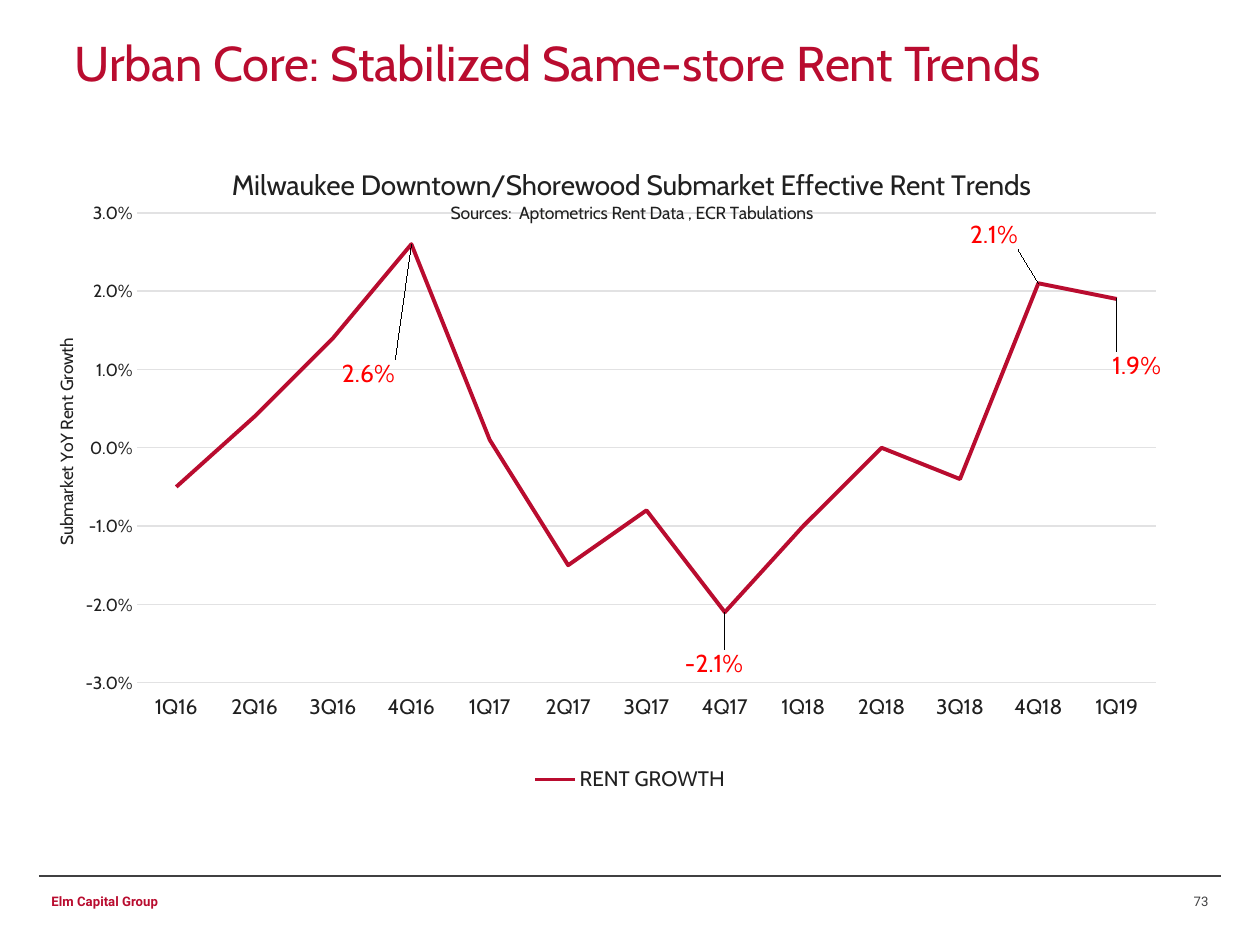
from dataclasses import dataclass
from lxml.etree import SubElement, QName
from pptx import Presentation
from pptx.chart.data import CategoryChartData
from pptx.dml.color import RGBColor
from pptx.enum.chart import (XL_CHART_TYPE, XL_LABEL_POSITION, XL_LEGEND_POSITION,
                             XL_MARKER_STYLE, XL_TICK_LABEL_POSITION, XL_TICK_MARK)
from pptx.enum.shapes import MSO_CONNECTOR
from pptx.enum.text import MSO_ANCHOR, MSO_AUTO_SIZE, PP_ALIGN
from pptx.oxml import parse_xml
from pptx.oxml.ns import qn
from pptx.util import Pt

# Content
TITLE = "Urban Core: Stabilized Same-store Rent Trends"
HEADS = ["Milwaukee Downtown/Shorewood Submarket Effective Rent Trends",
         "Sources:  Aptometrics Rent Data , ECR Tabulations"]
AXIS = "Submarket YoY Rent Growth"
FIRM, PAGE = "Elm Capital Group", "73"
SERIES = "RENT GROWTH"
RENTS = [("1Q16", -0.005), ("2Q16", 0.004), ("3Q16", 0.014), ("4Q16", 0.026),
         ("1Q17", 0.001), ("2Q17", -0.015), ("3Q17", -0.008), ("4Q17", -0.021),
         ("1Q18", -0.010), ("2Q18", 0.000), ("3Q18", -0.004), ("4Q18", 0.021),
         ("1Q19", 0.019)]
# Quarter: label shift from its point, in px
CALLS = {"4Q16": (-74, 130), "4Q17": (-45, 52), "4Q18": (-73, -49), "1Q19": (-10, 67)}

# Places in px: left, top, width, height
WIDE, HIGH = 1260, 945
HEAD_BOX = (62, 6, 1113, 113)
CHART_BOX = (39, 137, 1182, 660)
FIRM_BOX = (39, 887, 256, 29)
PAGE_BOX = (1105, 876, 116, 50)
RULE_Y = 876


@dataclass
class Theme:
    red: RGBColor = RGBColor(0xB9, 0x0C, 0x2F)
    call: RGBColor = RGBColor(0xFF, 0, 0)
    ink: RGBColor = RGBColor(0x20, 0x20, 0x20)
    gray: RGBColor = RGBColor(0x40, 0x40, 0x41)
    grid: RGBColor = RGBColor(0xE2, 0xE2, 0xE3)
    face: str = "Cabin"
    small: str = "Roboto"
    title: float = 27.9
    head: float = 16
    label: float = 14
    cat: float = 12
    val: float = 10
    base: float = 8
    foot: float = 7.5


T = Theme()


def px(n):
    return round(n * 914400 / 126)


def style(font, size, color=T.ink, face=T.face, bold=False):
    font.size, font.name, font.bold = Pt(size), face, bold
    font.color.rgb = color


def stroke(line, color, width):
    line.color.rgb, line.width = color, Pt(width)


def place(node, index, **parts):
    """Give a chart part a manual layout, as shares of the chart."""
    for old in node.findall(qn("c:layout")):
        node.remove(old)
    layout = node.makeelement(qn("c:layout"))
    manual = SubElement(layout, qn("c:manualLayout"))
    for key, val in parts.items():
        SubElement(manual, qn("c:" + key), val=str(val))
    node.insert(index, layout)


def note(slide, box, text, color, align=PP_ALIGN.LEFT, bold=False):
    frame = slide.shapes.add_textbox(*map(px, box)).text_frame
    frame.word_wrap = True
    frame.vertical_anchor = MSO_ANCHOR.MIDDLE
    frame.text = text
    para = frame.paragraphs[0]
    para.alignment = align
    style(para.runs[0].font, T.foot, color, T.small, bold)


def add_title(slide):
    head = slide.shapes.title
    head.left, head.top, head.width, head.height = map(px, HEAD_BOX)
    frame = head.text_frame
    frame.text = TITLE
    frame.auto_size = MSO_AUTO_SIZE.NONE
    frame.vertical_anchor = MSO_ANCHOR.MIDDLE
    frame.paragraphs[0].alignment = PP_ALIGN.LEFT
    style(frame.paragraphs[0].runs[0].font, T.title, T.red)


def add_heads(chart):
    chart.has_title = True
    frame = chart.chart_title.text_frame
    frame.text = HEADS[0]
    frame.add_paragraph().text = HEADS[1]
    for para, size in zip(frame.paragraphs, (T.head, T.val)):
        para.alignment = PP_ALIGN.CENTER
        style(para.runs[0].font, size)
    node = chart.chart_title._element
    place(node, 1, xMode="edge", yMode="edge", x=0.16, y=0.04)
    node.find(qn("c:overlay")).set("val", "1")


def add_axes(chart):
    cat, val = chart.category_axis, chart.value_axis
    for axis, size in ((cat, T.cat), (val, T.val)):
        axis.major_tick_mark = axis.minor_tick_mark = XL_TICK_MARK.NONE
        style(axis.tick_labels.font, size)
    cat.tick_label_position = XL_TICK_LABEL_POSITION.LOW
    cat.has_major_gridlines = False
    stroke(cat.format.line, T.grid, 0.75)
    val.minimum_scale, val.maximum_scale, val.major_unit = -0.03, 0.03, 0.01
    val.tick_labels.number_format = "0.0%"
    val.tick_labels.number_format_is_linked = False
    val.format.line.fill.background()
    stroke(val.major_gridlines.format.line, T.grid, 0.75)
    frame = val.axis_title.text_frame
    frame.text = AXIS
    style(frame.paragraphs[0].runs[0].font, T.val)
    node = val.axis_title._element
    turn = node.find(".//" + qn("a:bodyPr"))
    turn.set("rot", "-5400000")
    turn.set("vert", "horz")
    place(node, 1, xMode="edge", yMode="edge", x=0.01, y=0.3)


def add_calls(line):
    labels = line.data_labels
    labels.show_value = False
    labels.number_format = "0.0%"
    labels.number_format_is_linked = False
    for i, (name, _) in enumerate(RENTS):
        if name in CALLS:
            label = line.points[i].data_label
            style(label.font, T.label, T.call)
            label.position = XL_LABEL_POSITION.RIGHT
    nodes = labels._element.findall(qn("c:dLbl"))
    for node, (dx, dy) in zip(nodes, CALLS.values()):
        place(node, 1, x=round(dx / CHART_BOX[2], 3), y=round(dy / CHART_BOX[3], 3))
    # Leader lines from points to moved labels
    labels._element.append(parse_xml(
        '<c:extLst xmlns:c="http://schemas.openxmlformats.org/drawingml/2006/chart">'
        '<c:ext uri="{CE6537A1-D6FC-4f65-9D91-7224C49458BB}" '
        'xmlns:c15="http://schemas.microsoft.com/office/drawing/2012/chart">'
        '<c15:showLeaderLines val="1"/></c:ext></c:extLst>'))


def add_rents(slide):
    data = CategoryChartData(number_format="0.0%")
    data.categories = [name for name, _ in RENTS]
    data.add_series(SERIES, [rent for _, rent in RENTS])
    chart = slide.shapes.add_chart(XL_CHART_TYPE.LINE, *map(px, CHART_BOX), data).chart
    style(chart.font, T.base)
    add_heads(chart)
    add_axes(chart)
    chart.has_legend = True
    chart.legend.position = XL_LEGEND_POSITION.BOTTOM
    chart.legend.include_in_layout = False
    style(chart.legend.font, T.cat)
    plot = chart.plots[0]
    plot.vary_by_categories = False
    line = plot.series[0]
    line.smooth = False
    line.marker.style = XL_MARKER_STYLE.NONE
    stroke(line.format.line, T.red, 2.25)
    add_calls(line)
    place(chart._chartSpace.find(".//" + qn("c:plotArea")), 0, layoutTarget="inner",
          xMode="edge", yMode="edge", x=0.083, y=0.115, w=0.862, h=0.712)


def add_foot(slide):
    rule = slide.shapes.add_connector(MSO_CONNECTOR.STRAIGHT, px(39), px(RULE_Y),
                                      px(WIDE - 39), px(RULE_Y))
    stroke(rule.line, T.gray, 0.75)
    SubElement(rule._element.spPr, QName(qn("a:effectLst")))
    note(slide, FIRM_BOX, FIRM, T.red, bold=True)
    note(slide, PAGE_BOX, PAGE, T.gray, PP_ALIGN.RIGHT)


def main():
    deck = Presentation()
    deck.slide_width, deck.slide_height = px(WIDE), px(HIGH)
    slide = deck.slides.add_slide(deck.slide_layouts[5])
    add_foot(slide)
    add_rents(slide)
    add_title(slide)
    deck.save("out.pptx")


if __name__ == "__main__":
    main()
